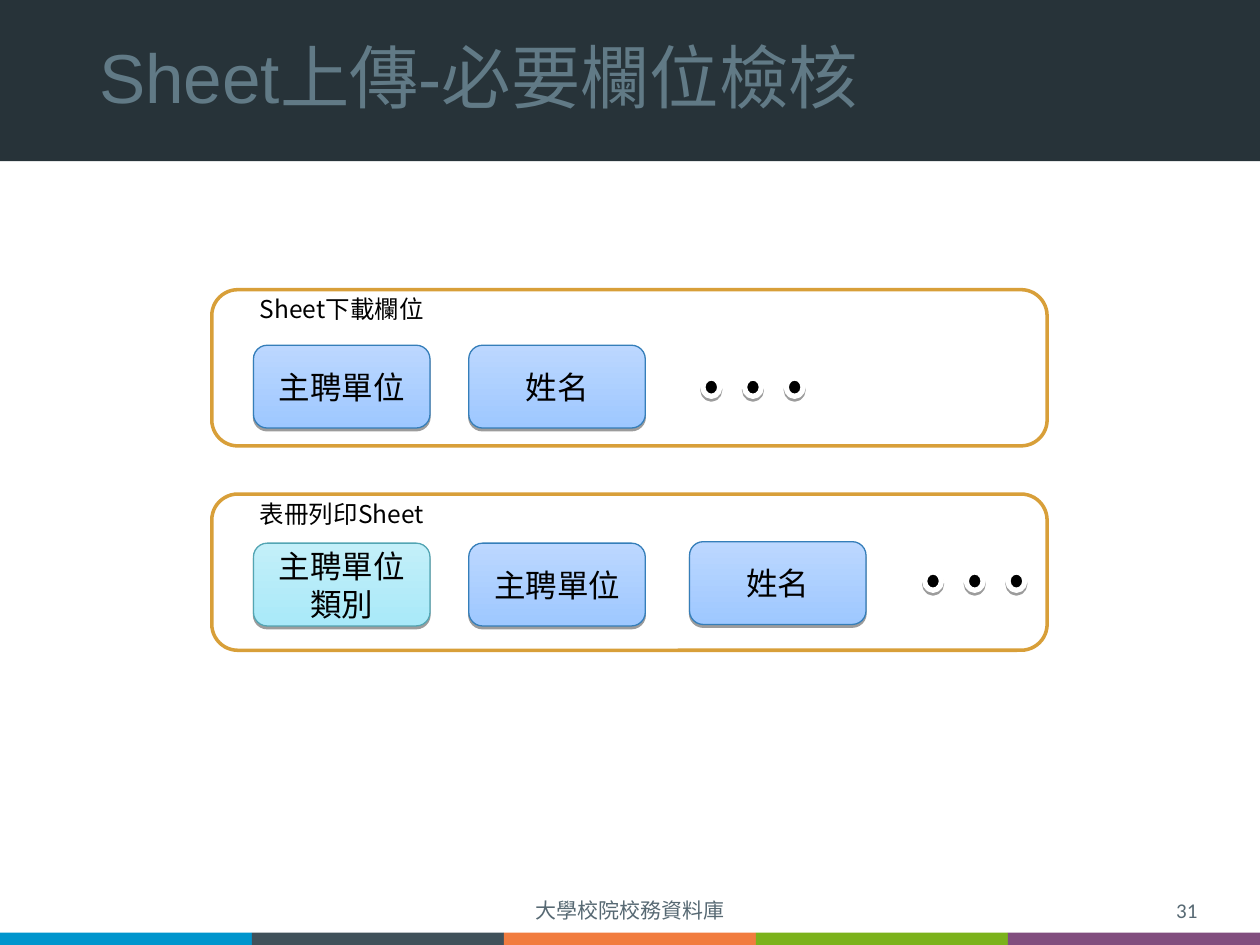
from dataclasses import dataclass
from lxml import etree
from pptx import Presentation
from pptx.dml.color import RGBColor
from pptx.enum.shapes import MSO_SHAPE
from pptx.enum.text import MSO_ANCHOR, PP_ALIGN
from pptx.oxml import parse_xml
from pptx.oxml.ns import qn
from pptx.util import Cm, Pt

RECT, ROUND, OVAL = MSO_SHAPE.RECTANGLE, MSO_SHAPE.ROUNDED_RECTANGLE, MSO_SHAPE.OVAL
TOP, MIDDLE = MSO_ANCHOR.TOP, MSO_ANCHOR.MIDDLE
LEFT, CENTER, RIGHT = PP_ALIGN.LEFT, PP_ALIGN.CENTER, PP_ALIGN.RIGHT


@dataclass(frozen=True)
class Theme:
    band: str = "273339"
    bars: tuple = ("0095CD", "40515A", "F17C3F", "7BB21B", "814E7E")
    title: str = "617A86"
    foot: str = "576973"
    ink: str = "000000"
    paper: str = "FFFFFF"
    frame: str = "D89F39"
    blue: tuple = ("9EC8FF", "BCD7FF", "357EB9")
    aqua: tuple = ("A9E9F9", "C3EFF9", "53A5B3")
    head: float = 39.6
    large: float = 18
    label: float = 14
    small: float = 12
    sans: str = "Noto Sans CJK SC"


theme = Theme()
SHADOW = (
    '<a:effectLst xmlns:a="http://schemas.openxmlformats.org/drawingml/2006/main">'
    '<a:outerShdw dist="20320" dir="5400000" rotWithShape="0">'
    '<a:srgbClr val="000000"><a:alpha val="38000"/></a:srgbClr>'
    "</a:outerShdw></a:effectLst>"
)

deck = Presentation()
deck.slide_width, deck.slide_height = Cm(25.4), Cm(19.05)
slide = deck.slides.add_slide(deck.slide_layouts[6])


def draw(kind, x, y, w, h, fill, line=None, width=0.75, shadow=False):
    shape = slide.shapes.add_shape(kind, Cm(x), Cm(y), Cm(w), Cm(h))
    shape.shadow.inherit = False
    if isinstance(fill, tuple):
        shape.fill.gradient()
        shape.fill.gradient_angle = 90
        for stop, tone in zip(shape.fill.gradient_stops, fill):
            stop.color.rgb = RGBColor.from_string(tone)
    else:
        shape.fill.solid()
        shape.fill.fore_color.rgb = RGBColor.from_string(fill)
    if line:
        shape.line.color.rgb = RGBColor.from_string(line)
        shape.line.width = Pt(width)
    else:
        shape.line.fill.background()
    if shadow:
        props = shape.element.spPr
        props.replace(props.find(qn("a:effectLst")), parse_xml(SHADOW))
    return shape


def write(text, shape=None, box=None, size=theme.large, font=theme.sans, color=theme.ink,
          align=LEFT, anchor=MIDDLE, inset=(0.13, 0.08), space=None):
    shape = shape or slide.shapes.add_textbox(*map(Cm, box))
    frame = shape.text_frame
    frame.word_wrap = True
    frame.vertical_anchor = anchor
    frame.margin_left = frame.margin_right = Cm(inset[0])
    frame.margin_top = frame.margin_bottom = Cm(inset[1])
    frame.text = text
    for para in frame.paragraphs:
        para.alignment = align
        para.line_spacing = space
        for run in para.runs:
            run.font.size = Pt(size)
            run.font.name = font
            run.font.color.rgb = RGBColor.from_string(color)
            east = etree.SubElement(run.font._element, qn("a:ea"))
            east.set("typeface", theme.sans)


draw(RECT, 0, -0.03, 25.4, 3.28, theme.band)
for i, tone in enumerate(theme.bars):
    draw(RECT, i * 5.08, 18.8, 5.08, 0.25, tone)

wide = (0.25, 0.13)
write("Sheet上傳-必要欄位檢核", box=(1.75, 0.69, 21.9, 1.88), size=theme.head,
      font="Arial", color=theme.title, inset=wide, space=0.9)
for text, x, w, align in (("大學校院校務資料庫", 8.41, 8.58, CENTER), ("31", 18.67, 5.72, RIGHT)):
    write(text, box=(x, 17.96, w, 0.79), size=theme.small, font="Calibri",
          color=theme.foot, align=align, inset=wide)

groups = (
    (5.84, "Sheet下載欄位", 5.84, 14.17, 7.62, (
        ("主聘單位", 5.11, 6.96, theme.blue),
        ("姓名", 9.45, 6.96, theme.blue))),
    (9.96, "表冊列印Sheet", 9.98, 18.64, 11.53, (
        ("主聘單位\n類別", 5.11, 10.95, theme.aqua),
        ("主聘單位", 9.45, 10.95, theme.blue),
        ("姓名", 13.9, 10.92, theme.blue))),
)
for top, label, high, dot, row, fields in groups:
    draw(ROUND, 4.27, top, 16.84, 3.15, theme.paper, theme.frame, 2)
    for text, x, y, tones in fields:
        field = draw(ROUND, x, y, 3.56, 1.67, tones[:2], tones[2], shadow=True)
        write(text, shape=field, align=CENTER)
    for i in range(3):
        draw(OVAL, dot + i * 0.84, row, 0.34, 0.37, theme.ink, theme.paper, 3, True)
    write(label, box=(5.11, high, 4.62, 0.74), size=theme.label, anchor=TOP)

deck.save("out.pptx")
